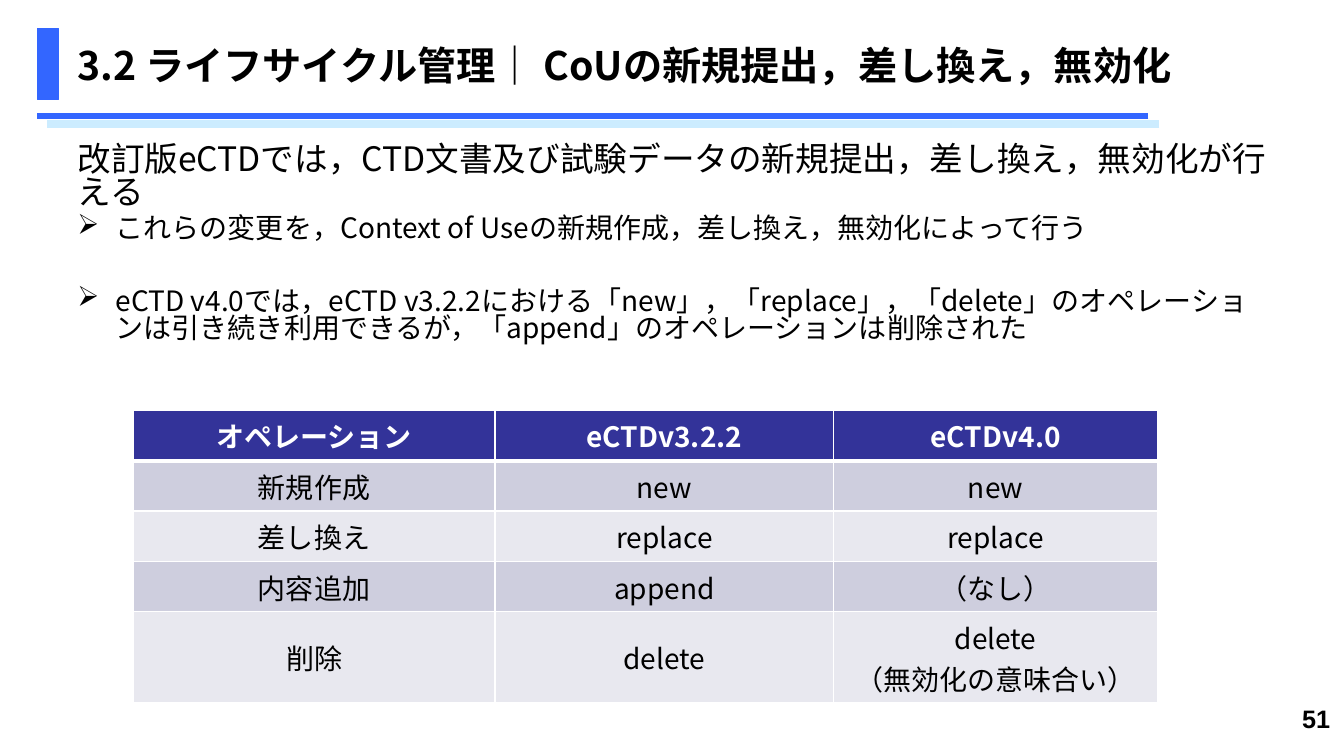
from dataclasses import dataclass

from pptx import Presentation
from pptx.dml.color import RGBColor
from pptx.enum.shapes import MSO_CONNECTOR, MSO_SHAPE
from pptx.enum.text import MSO_ANCHOR, PP_ALIGN
from pptx.oxml.ns import qn
from pptx.slide import Slide
from pptx.table import _Cell
from pptx.text.text import TextFrame, _Paragraph
from pptx.util import Inches, Pt
from lxml.etree import SubElement


@dataclass(frozen=True)
class Theme:
    font: str = "Noto Sans CJK JP"
    number_font: str = "Arial"
    black: str = "000000"
    white: str = "FFFFFF"
    blue: str = "3366FF"
    pale_blue: str = "CCECFF"
    header: str = "333399"
    bands: tuple[str, str] = ("CECEDE", "E8E8EF")
    title_size: int = 28
    lead_size: int = 24
    text_size: int = 20
    number_size: int = 18
    line_spacing: float = 0.82


@dataclass(frozen=True)
class Rule:
    left: float
    right: float
    y: float
    color: str
    width: float


@dataclass(frozen=True)
class BodyItem:
    text: str
    size: int
    space_before: float
    bullet: bool = True


THEME = Theme()

RULES = [
    Rule(0.37, 11.39, 1.15, THEME.blue, 4.5),
    Rule(0.47, 11.5, 1.23, THEME.pale_blue, 6),
]

BODY = [
    BodyItem("改訂版eCTDでは，CTD文書及び試験データの新規提出，差し換え，無効化が行える",
             THEME.lead_size, 0, bullet=False),
    BodyItem("これらの変更を，Context of Useの新規作成，差し換え，無効化によって行う",
             THEME.text_size, 4),
    BodyItem("eCTD v4.0では，eCTD v3.2.2における「new」，「replace」，「delete」の"
             "オペレーションは引き続き利用できるが，「append」のオペレーションは削除された",
             THEME.text_size, 32),
]

OPERATIONS = [
    ("オペレーション", "eCTDv3.2.2", "eCTDv4.0"),
    ("新規作成", "new", "new"),
    ("差し換え", "replace", "replace"),
    ("内容追加", "append", "（なし）"),
    ("削除", "delete", "delete\n（無効化の意味合い）"),
]
COLUMN_WIDTHS = [3.59, 3.36, 3.21]
ROW_HEIGHTS = [0.5, 0.5, 0.5, 0.5, 0.9]


def style_paragraph(paragraph: _Paragraph, size: int, color: str = THEME.black,
                    bold: bool = False, name: str = THEME.font) -> None:
    font = paragraph.font
    font.size, font.bold, font.name = Pt(size), bold, name
    font.color.rgb = RGBColor.from_string(color)
    properties = paragraph._p.pPr.find(qn("a:defRPr"))
    SubElement(properties, qn("a:ea")).set("typeface", name)


def add_text_frame(slide: Slide, left: float, top: float, width: float, height: float,
                   anchor: MSO_ANCHOR = MSO_ANCHOR.TOP) -> TextFrame:
    text_box = slide.shapes.add_textbox(Inches(left), Inches(top), Inches(width), Inches(height))
    text_frame = text_box.text_frame
    text_frame.word_wrap = True
    text_frame.vertical_anchor = anchor
    return text_frame


def add_rule(slide: Slide, rule: Rule) -> None:
    connector = slide.shapes.add_connector(
        MSO_CONNECTOR.STRAIGHT, Inches(rule.right), Inches(rule.y),
        Inches(rule.left), Inches(rule.y))
    connector.line.color.rgb = RGBColor.from_string(rule.color)
    connector.line.width = Pt(rule.width)
    SubElement(connector._element.spPr, qn("a:effectLst"))


def add_accent_bar(slide: Slide) -> None:
    shape = slide.shapes.add_shape(
        MSO_SHAPE.RECTANGLE, Inches(0.37), Inches(0.28), Inches(0.21), Inches(0.71))
    shape.shadow.inherit = False
    shape.fill.solid()
    shape.fill.fore_color.rgb = RGBColor.from_string(THEME.blue)
    shape.line.color.rgb = RGBColor.from_string(THEME.blue)
    shape.line.width = Pt(0.75)


def add_body(slide: Slide) -> None:
    text_frame = add_text_frame(slide, 0.67, 1.39, 12, 2.5)
    for index, item in enumerate(BODY):
        paragraph = text_frame.add_paragraph() if index else text_frame.paragraphs[0]
        paragraph.text = item.text
        if item.bullet:
            properties = paragraph._p.get_or_add_pPr()
            properties.set("marL", str(Inches(0.38)))
            properties.set("indent", str(-Inches(0.38)))
            SubElement(properties, qn("a:buChar")).set("char", "➢")
        paragraph.line_spacing = THEME.line_spacing
        paragraph.space_before = Pt(item.space_before)
        style_paragraph(paragraph, item.size)


def set_borders(cell: _Cell, bottom_width: float) -> None:
    properties = cell._tc.get_or_add_tcPr()
    widths = {"a:lnL": 1, "a:lnR": 1, "a:lnT": 1, "a:lnB": bottom_width}
    for position, (tag, width) in enumerate(widths.items()):
        line = SubElement(properties, qn(tag))
        line.set("w", str(Pt(width)))
        fill = SubElement(line, qn("a:solidFill"))
        SubElement(fill, qn("a:srgbClr")).set("val", THEME.white)
        properties.insert(position, line)


def add_operation_table(slide: Slide) -> None:
    table = slide.shapes.add_table(
        len(OPERATIONS), len(COLUMN_WIDTHS), Inches(1.32), Inches(4.07),
        Inches(sum(COLUMN_WIDTHS)), Inches(sum(ROW_HEIGHTS))).table
    for column, width in zip(table.columns, COLUMN_WIDTHS):
        column.width = Inches(width)
    for row_index, (row, height) in enumerate(zip(table.rows, ROW_HEIGHTS)):
        row.height = Inches(height)
        is_header = row_index == 0
        fill_color = THEME.header if is_header else THEME.bands[(row_index - 1) % 2]
        for cell, text in zip(row.cells, OPERATIONS[row_index]):
            cell.text = text
            cell.vertical_anchor = MSO_ANCHOR.MIDDLE
            cell.fill.solid()
            cell.fill.fore_color.rgb = RGBColor.from_string(fill_color)
            set_borders(cell, 3 if is_header else 1)
            for paragraph in cell.text_frame.paragraphs:
                paragraph.alignment = PP_ALIGN.CENTER
                style_paragraph(paragraph, THEME.text_size,
                                THEME.white if is_header else THEME.black, is_header)


def main() -> None:
    presentation = Presentation()
    presentation.slide_width, presentation.slide_height = Inches(13.33), Inches(7.5)
    slide = presentation.slides.add_slide(presentation.slide_layouts[6])

    # Heading with accent bar and double rule
    add_rule(slide, RULES[0])
    add_accent_bar(slide)
    add_rule(slide, RULES[1])
    title = add_text_frame(slide, 0.67, 0.21, 12, 0.87, MSO_ANCHOR.MIDDLE).paragraphs[0]
    title.text = "3.2 ライフサイクル管理｜ CoUの新規提出，差し換え，無効化"
    style_paragraph(title, THEME.title_size, bold=True)

    # Explanation and comparison of operations
    add_body(slide)
    add_operation_table(slide)

    # Slide number
    number = add_text_frame(slide, 12.01, 6.93, 1.28, 0.52).paragraphs[0]
    number.text = "51"
    number.alignment = PP_ALIGN.RIGHT
    style_paragraph(number, THEME.number_size, bold=True, name=THEME.number_font)

    presentation.save("out.pptx")


if __name__ == "__main__":
    main()
